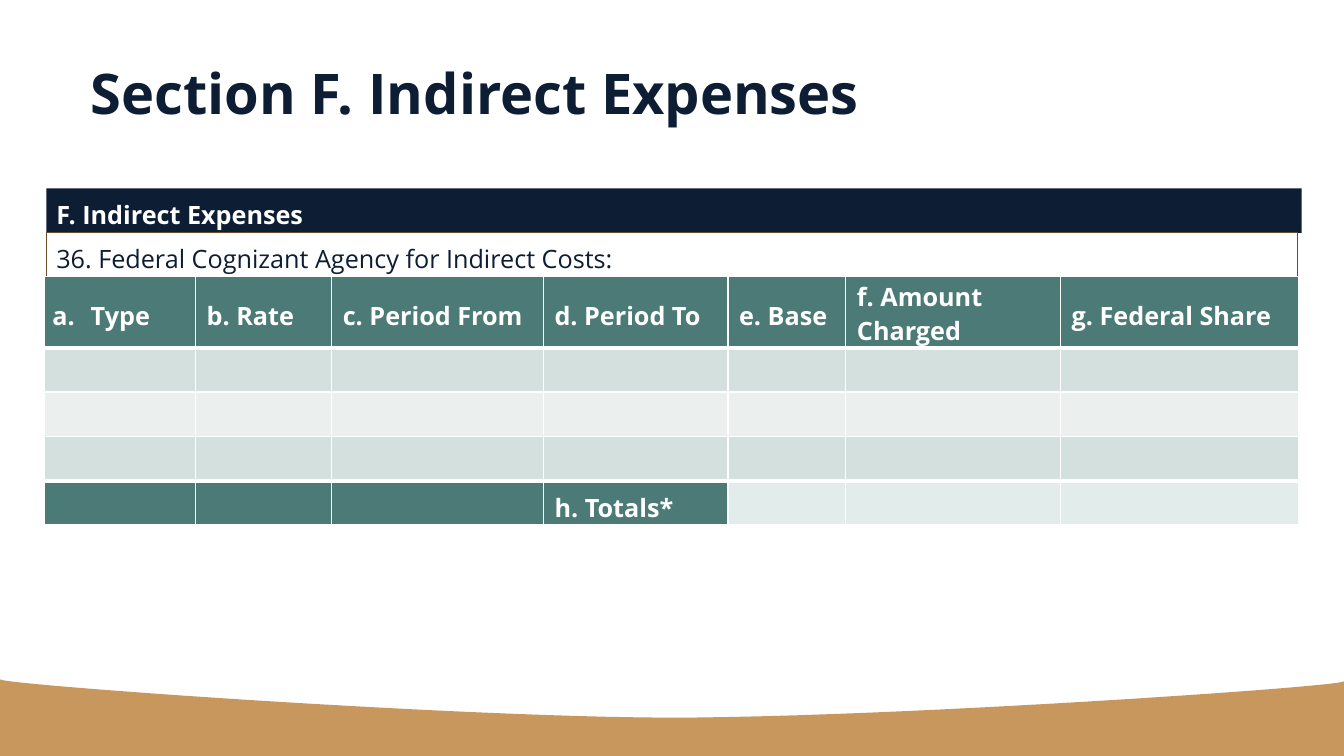
from lxml.etree import SubElement
from pptx import Presentation
from pptx.dml.color import RGBColor
from pptx.enum.shapes import MSO_SHAPE
from pptx.enum.text import MSO_ANCHOR, PP_ALIGN
from pptx.oxml import parse_xml
from pptx.oxml.ns import nsdecls, qn
from pptx.util import Inches, Pt

NAVY, TEAL, TAN, BROWN, WHITE = "0D1D34", "4C7A76", "C7975E", "6D4C26", "FFFFFF"
BAND_DARK, BAND_LIGHT, TOTAL_LIGHT = "D4E0DE", "EBF0EF", "E1ECEB"


def paint(target, color):
    """Give a fill or a line one solid colour."""
    target.solid()
    target.fore_color.rgb = RGBColor.from_string(color)


def write(frame, text, size, color, bold=True, spacing=1.2):
    """Set one left-aligned paragraph and format its run."""
    frame.text = text
    line = frame.paragraphs[0]
    line.alignment = PP_ALIGN.LEFT
    line.line_spacing = spacing
    font = line.runs[0].font
    font.name, font.size, font.bold = "Open Sans", Pt(size), bold
    font.color.rgb = RGBColor.from_string(color)


deck = Presentation()
deck.slide_width, deck.slide_height = Inches(13.33), Inches(7.5)
slide = deck.slides.add_slide(deck.slide_layouts[6])
shapes = slide.shapes

# Curved footer: two Bézier arcs sampled along the top edge
arcs = [
    [(0, 6.74), (0, 6.79), (4.4, 7.11), (6.62, 7.12)],
    [(6.62, 7.12), (8.85, 7.12), (13.33, 6.81), (13.33, 6.76)],
]
STEPS = 24
crest = []
for arc in arcs:
    for step in range(STEPS + 1):
        t = step / STEPS
        weights = ((1 - t) ** 3, 3 * t * (1 - t) ** 2, 3 * t * t * (1 - t), t ** 3)
        crest.append(tuple(Inches(sum(w * point[axis] for w, point in zip(weights, arc)))
                           for axis in (0, 1)))
outline = shapes.build_freeform(0, deck.slide_height)
outline.add_line_segments(crest + [(deck.slide_width, deck.slide_height)], close=True)
footer = outline.convert_to_shape()
footer.shadow.inherit = False
paint(footer.fill, TAN)
footer.line.fill.background()

# Title
title = shapes.add_textbox(Inches(0.8), Inches(0.4), Inches(11.76), Inches(0.9))
title.text_frame.word_wrap = True
title.text_frame.vertical_anchor = MSO_ANCHOR.BOTTOM
write(title.text_frame, "Section F. Indirect Expenses", 40, NAVY, spacing=1.02)

# Two heading strips stacked above the table
STRIP_TOP, ROW = 1.87, 0.44
strips = [
    ("F. Indirect Expenses", 12.45, NAVY, WHITE, True),
    ("36. Federal Cognizant Agency for Indirect Costs:", 12.41, None, NAVY, False),
]
for index, (text, width, fill, ink, bold) in enumerate(strips):
    strip = shapes.add_shape(MSO_SHAPE.RECTANGLE, Inches(0.46),
                             Inches(STRIP_TOP + index * ROW), Inches(width), Inches(ROW))
    strip.shadow.inherit = False
    if fill:
        paint(strip.fill, fill)
        strip.line.fill.background()
    else:
        strip.fill.background()
        paint(strip.line.fill, BROWN)
        strip.line.width = Pt(0.75)
    strip.text_frame.word_wrap = True
    strip.text_frame.vertical_anchor = MSO_ANCHOR.TOP
    write(strip.text_frame, text, 18, ink, bold)

# Expense table
headings = ["Type", "b. Rate", "c. Period From", "d. Period To", "e. Base",
            "f. Amount Charged", "g. Federal Share"]
widths = [1.5, 1.35, 2.1, 1.83, 1.17, 2.13, 2.36]
heights = [0.71] + [ROW] * 4
TOTALS_ROW, TOTALS_COL = 4, 3
labels = {(0, col): text for col, text in enumerate(headings)}
labels[TOTALS_ROW, TOTALS_COL] = "h. Totals*"

expenses = shapes.add_table(len(heights), len(widths), Inches(0.44), Inches(2.74),
                            Inches(sum(widths)), Inches(sum(heights))).table
expenses.first_row = expenses.horz_banding = False
for column, width in zip(expenses.columns, widths):
    column.width = Inches(width)
for band, height in zip(expenses.rows, heights):
    band.height = Inches(height)

for row in range(len(heights)):
    for col in range(len(widths)):
        cell = expenses.cell(row, col)
        cell.vertical_anchor = MSO_ANCHOR.MIDDLE
        cell.margin_left = cell.margin_right = Inches(0.08 if col == 0 else 0.11)
        cell.margin_top = cell.margin_bottom = 0

        # Fill: teal header and totals, banded body
        if row == 0 or (row == TOTALS_ROW and col <= TOTALS_COL):
            color = TEAL
        elif row == TOTALS_ROW:
            color = TOTAL_LIGHT
        else:
            color = BAND_DARK if row % 2 else BAND_LIGHT
        paint(cell.fill, color)

        # White borders, thicker below the header and above the totals
        top = 3 if row in (1, TOTALS_ROW) else 1
        bottom = 3 if row in (0, TOTALS_ROW - 1) else 1
        edges = [("lnL", 1), ("lnR", 1), ("lnT", top), ("lnB", bottom)]
        for place, (edge, points) in enumerate(edges):
            cell._tc.get_or_add_tcPr().insert(place, parse_xml(
                f'<a:{edge} {nsdecls("a")} w="{Pt(points)}"><a:solidFill>'
                f'<a:srgbClr val="{WHITE}"/></a:solidFill></a:{edge}>'))

        if (row, col) in labels:
            text = labels[row, col]
            wraps = text == "f. Amount Charged"
            if wraps or row == TOTALS_ROW:
                cell.margin_top = Inches(0.03)
            write(cell.text_frame, text, 18, WHITE, spacing=1.0 if wraps else 1.2)

# Automatic letter before the first heading
lettered = expenses.cell(0, 0).text_frame.paragraphs[0]._p.get_or_add_pPr()
lettered.set("marL", str(Inches(0.38)))
lettered.set("indent", str(-Inches(0.38)))
SubElement(lettered, qn("a:buAutoNum"), type="alphaLcPeriod")

deck.save("out.pptx")
